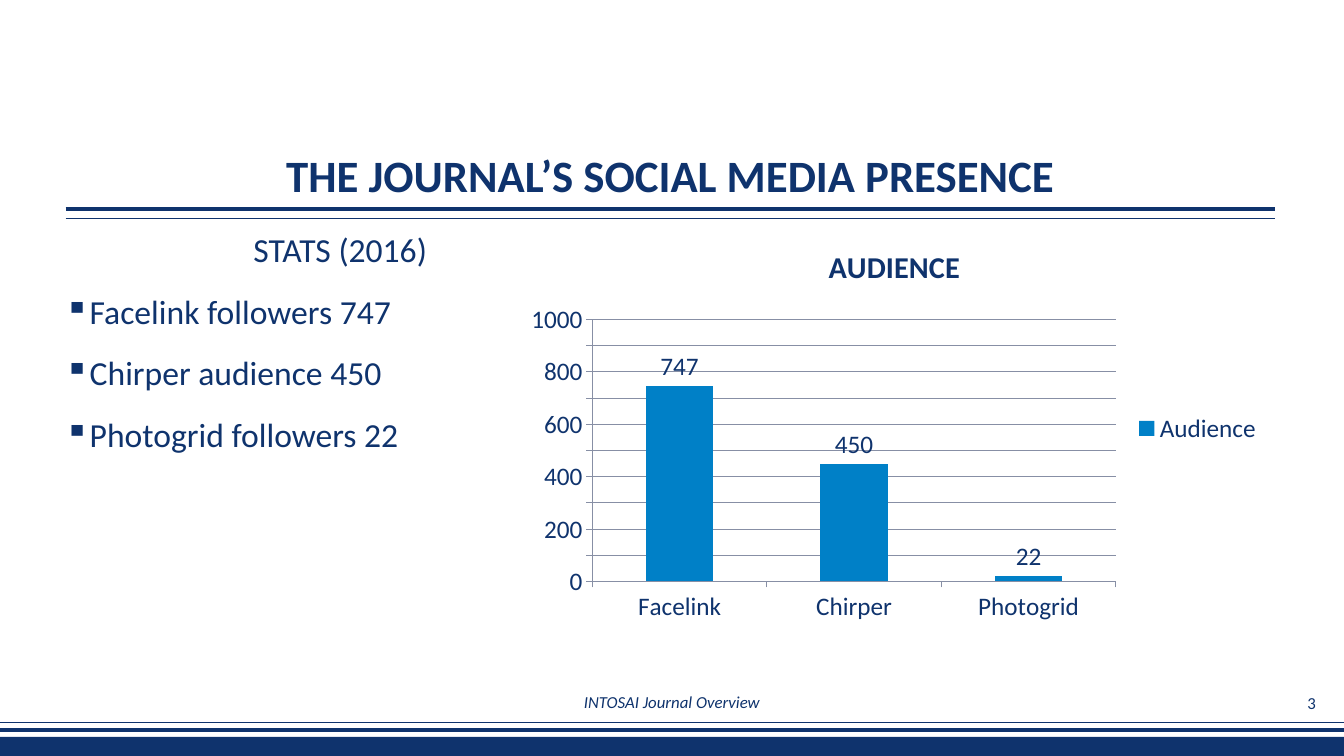
import dataclasses
import typing

import lxml.etree
import pptx
import pptx.chart.chart
import pptx.chart.data
import pptx.dml.color
import pptx.enum.chart
import pptx.enum.shapes
import pptx.enum.text
import pptx.oxml
import pptx.oxml.ns
import pptx.slide
import pptx.text.text
import pptx.util

Inches = pptx.util.Inches
Pt = pptx.util.Pt
Color = pptx.dml.color.RGBColor
Align = pptx.enum.text.PP_ALIGN
Anchor = pptx.enum.text.MSO_ANCHOR


@dataclasses.dataclass(frozen=True)
class Theme:
    font: str = "Calibri"
    navy: Color = Color(0x0F, 0x33, 0x6D)
    bar: Color = Color(0x00, 0x80, 0xC7)
    grid: Color = Color(0x87, 0x8F, 0xA5)
    title: float = 32
    body: float = 24
    head: float = 21.6
    chart: float = 18
    foot: float = 12


@dataclasses.dataclass(frozen=True)
class Rule:
    left: float
    right: float
    y: float
    width: float


@dataclasses.dataclass(frozen=True)
class Note:
    text: str
    left: float
    top: float
    width: float
    italic: bool


THEME = Theme()
WIDTH = 13.33
RULES = [
    Rule(0, WIDTH, 7.24, 3),
    Rule(0, WIDTH, 7.17, 1),
    Rule(0.65, 12.65, 2.07, 3),
    Rule(0.65, 12.65, 2.17, 1),
]
NOTES = [
    Note("3", 12.68, 6.77, 0.66, False),
    Note("INTOSAI Journal Overview", 0, 6.76, WIDTH, True),
]
STATS = [
    "Facelink followers 747",
    "Chirper audience 450",
    "Photogrid followers 22",
]
AUDIENCE = {"Facelink": 747, "Chirper": 450, "Photogrid": 22}


def style(font: typing.Any, size: float, bold: bool = False, italic: bool = False) -> None:
    font.name = THEME.font
    font.size = Pt(size)
    font.bold = bold
    font.italic = italic
    font.color.rgb = THEME.navy


def setup(frame: pptx.text.text.TextFrame, anchor: Anchor) -> None:
    """Wrap the text, and drop the side margins."""
    frame.word_wrap = True
    frame.auto_size = pptx.enum.text.MSO_AUTO_SIZE.NONE
    frame.vertical_anchor = anchor
    frame.margin_left = frame.margin_right = 0
    frame.margin_top = frame.margin_bottom = Inches(0.05)


def write(para: typing.Any, text: str, size: float, bold: bool = False, italic: bool = False) -> None:
    run = para.add_run()
    run.text = text
    style(run.font, size, bold, italic)


def bullet(para: typing.Any) -> None:
    props = para._p.get_or_add_pPr()
    props.set("marL", str(Inches(0.25)))
    props.set("indent", str(-Inches(0.25)))
    mark = lxml.etree.SubElement(props, pptx.oxml.ns.qn("a:buChar"))
    mark.set("char", "▪")


def add_rule(slide: pptx.slide.Slide, rule: Rule) -> None:
    line = slide.shapes.add_connector(
        pptx.enum.shapes.MSO_CONNECTOR.STRAIGHT,
        Inches(rule.left), Inches(rule.y), Inches(rule.right), Inches(rule.y),
    )
    line.line.color.rgb = THEME.navy
    line.line.width = Pt(rule.width)
    lxml.etree.SubElement(line._element.spPr, pptx.oxml.ns.qn("a:effectLst"))


def add_band(slide: pptx.slide.Slide) -> None:
    band = slide.shapes.add_shape(
        pptx.enum.shapes.MSO_SHAPE.RECTANGLE, 0, Inches(7.31), Inches(WIDTH), Inches(0.19)
    )
    band.shadow.inherit = False
    band.fill.solid()
    band.fill.fore_color.rgb = THEME.navy
    band.line.fill.background()


def add_title(slide: pptx.slide.Slide) -> None:
    title = slide.shapes.title
    title.left, title.top = Inches(0.65), Inches(0.86)
    title.width, title.height = Inches(12), Inches(1.2)
    setup(title.text_frame, Anchor.BOTTOM)
    para = title.text_frame.paragraphs[0]
    para.alignment = Align.CENTER
    para.line_spacing = 0.9
    write(para, "THE JOURNAL’S SOCIAL MEDIA PRESENCE", THEME.title, bold=True)


def add_stats(slide: pptx.slide.Slide) -> None:
    box = slide.shapes.add_textbox(Inches(0.64), Inches(2.27), Inches(5.47), Inches(4.47))
    frame = box.text_frame
    setup(frame, Anchor.TOP)
    head = frame.paragraphs[0]
    head.alignment = Align.CENTER
    head.line_spacing = 0.9
    write(head, "STATS (2016)", THEME.body)
    for text in STATS:
        para = frame.add_paragraph()
        para.line_spacing = 0.9
        para.space_before = Pt(18)
        bullet(para)
        write(para, text, THEME.body)


def add_note(slide: pptx.slide.Slide, note: Note) -> None:
    box = slide.shapes.add_textbox(
        Inches(note.left), Inches(note.top), Inches(note.width), Inches(0.4)
    )
    setup(box.text_frame, Anchor.MIDDLE)
    para = box.text_frame.paragraphs[0]
    para.alignment = Align.CENTER
    write(para, note.text, THEME.foot, italic=note.italic)


def style_axes(chart: pptx.chart.chart.Chart) -> None:
    scale = chart.value_axis
    scale.minimum_scale, scale.maximum_scale = 0, 1000
    scale.major_unit = 100
    scale.has_major_gridlines = True
    for axis in (chart.category_axis, scale):
        axis.major_tick_mark = pptx.enum.chart.XL_TICK_MARK.OUTSIDE
        style(axis.tick_labels.font, THEME.chart)
    for part in (chart.category_axis, scale, scale.major_gridlines):
        part.format.line.color.rgb = THEME.grid
        part.format.line.width = Pt(0.75)


def add_chart(slide: pptx.slide.Slide) -> None:
    data = pptx.chart.data.CategoryChartData()
    data.categories = list(AUDIENCE)
    data.add_series("Audience", list(AUDIENCE.values()))
    chart = slide.shapes.add_chart(
        pptx.enum.chart.XL_CHART_TYPE.COLUMN_CLUSTERED,
        Inches(5.12), Inches(2.25), Inches(7.5), Inches(4), data,
    ).chart
    style(chart.font, THEME.chart)
    chart.has_title = True
    write(chart.chart_title.text_frame.paragraphs[0], "AUDIENCE", THEME.head, bold=True)
    chart.chart_title.include_in_layout = False
    chart.has_legend = True
    chart.legend.position = pptx.enum.chart.XL_LEGEND_POSITION.RIGHT
    chart.legend.include_in_layout = False
    style(chart.legend.font, THEME.chart)
    style_axes(chart)
    plot = chart.plots[0]
    plot.gap_width = 158
    plot.vary_by_categories = False
    bars = plot.series[0]
    bars.format.fill.solid()
    bars.format.fill.fore_color.rgb = THEME.bar
    labels = bars.data_labels
    labels.show_value = True
    labels.position = pptx.enum.chart.XL_LABEL_POSITION.OUTSIDE_END
    style(labels.font, THEME.chart)


def main() -> None:
    deck = pptx.Presentation()
    deck.slide_width, deck.slide_height = Inches(WIDTH), Inches(7.5)
    slide = deck.slides.add_slide(deck.slide_layouts.get_by_name("Title Only"))
    add_band(slide)
    for rule in RULES:
        add_rule(slide, rule)
    add_title(slide)
    add_stats(slide)
    add_chart(slide)
    for note in NOTES:
        add_note(slide, note)
    deck.save("out.pptx")


if __name__ == "__main__":
    main()
